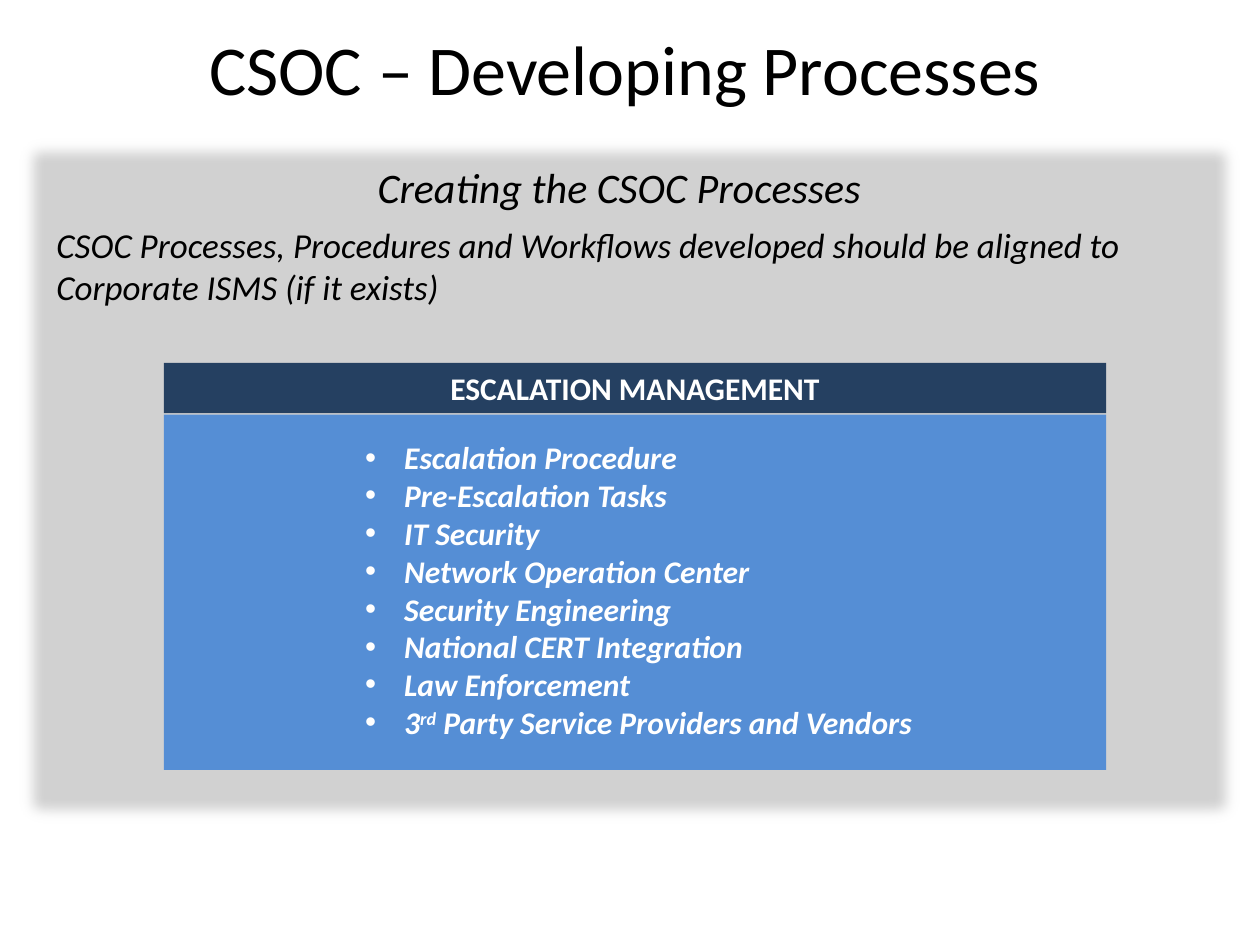
from lxml import etree
from pptx import Presentation
from pptx import util as u
from pptx.dml import color
from pptx.enum import shapes, text
from pptx.oxml import ns

ESCALATION_ITEMS = [
    "Escalation Procedure", "Pre-Escalation Tasks", "IT Security",
    "Network Operation Center", "Security Engineering",
    "National CERT Integration", "Law Enforcement",
]


def rgb(value):
    return color.RGBColor.from_string(value)


def add_span(para, words, size=18, ink="FFFFFF", bold=False, italic=False, raised=False):
    span = para.add_run()
    span.text = words
    font = span.font
    font.name, font.size, font.bold, font.italic = "Calibri", u.Pt(size), bold, italic
    font.color.rgb = rgb(ink)
    if raised:
        font._element.set("baseline", "30000")


def add_bullet(para, indent=0.31):
    props = para._p.get_or_add_pPr()
    props.set("marL", str(u.Inches(indent)))
    props.set("indent", str(u.Inches(-indent)))
    etree.SubElement(props, ns.qn("a:buFont")).set("typeface", "Arial")
    etree.SubElement(props, ns.qn("a:buChar")).set("char", "•")


class SlideBuilder:
    def __init__(self, deck):
        self.page = deck.slides.add_slide(deck.slide_layouts[6])

    def rect(self, left, top, width, height, fill):
        box = self.page.shapes.add_shape(
            shapes.MSO_SHAPE.RECTANGLE, *map(u.Inches, (left, top, width, height)))
        box.shadow.inherit = False
        box.fill.solid()
        box.fill.fore_color.rgb = rgb(fill)
        box.line.fill.background()
        return box

    def soft_panel(self, left, top, width, height, fill, radius):
        box = self.rect(left, top, width, height, fill)
        effects = box._element.spPr.find(ns.qn("a:effectLst"))
        etree.SubElement(effects, ns.qn("a:softEdge")).set("rad", str(u.Inches(radius)))

    def textbox(self, left, top, width, height, anchor=text.MSO_ANCHOR.TOP):
        box = self.page.shapes.add_textbox(*map(u.Inches, (left, top, width, height)))
        frame = box.text_frame
        frame.word_wrap = True
        frame.vertical_anchor = anchor
        return frame

    def centred(self, frame, words, **style):
        para = frame.paragraphs[0]
        para.alignment = text.PP_ALIGN.CENTER
        add_span(para, words, **style)


def main():
    deck = Presentation()
    deck.slide_width, deck.slide_height = u.Inches(10), u.Inches(7.5)
    slide = SlideBuilder(deck)

    # Grey panel and escalation block
    slide.soft_panel(0.12, 1.07, 9.76, 5.51, "D1D1D1", radius=0.12)
    slide.rect(1.3, 3.29, 7.48, 2.82, "558ED5")
    header = slide.rect(1.3, 2.88, 7.48, 0.4, "254061")
    slide.centred(header.text_frame, "ESCALATION MANAGEMENT", bold=True)

    # Escalation list
    frame = slide.textbox(2.8, 3.43, 5, 2.52)
    item_style = dict(bold=True, italic=True)
    for index, item in enumerate(ESCALATION_ITEMS):
        para = frame.add_paragraph() if index else frame.paragraphs[0]
        add_bullet(para)
        add_span(para, item, **item_style)
    para = frame.add_paragraph()
    add_bullet(para)
    add_span(para, "3", **item_style)
    add_span(para, "rd", raised=True, **item_style)
    add_span(para, " Party Service Providers and Vendors", **item_style)

    # Title
    title = slide.textbox(0.43, 0.14, 9.06, 0.79, text.MSO_ANCHOR.MIDDLE)
    slide.centred(title, "CSOC – Developing Processes", size=40, ink="000000")

    # Introduction
    intro = slide.textbox(0.35, 1.23, 9.13, 1.3)
    slide.centred(intro, "Creating the CSOC Processes", size=24, ink="000000", italic=True)
    para = intro.add_paragraph()
    para.space_before = u.Pt(7)
    add_span(para, "CSOC Processes, Procedures and Workflows developed should be "
             "aligned to Corporate ISMS (if it exists)", size=20, ink="000000", italic=True)

    deck.save("out.pptx")


if __name__ == "__main__":
    main()
